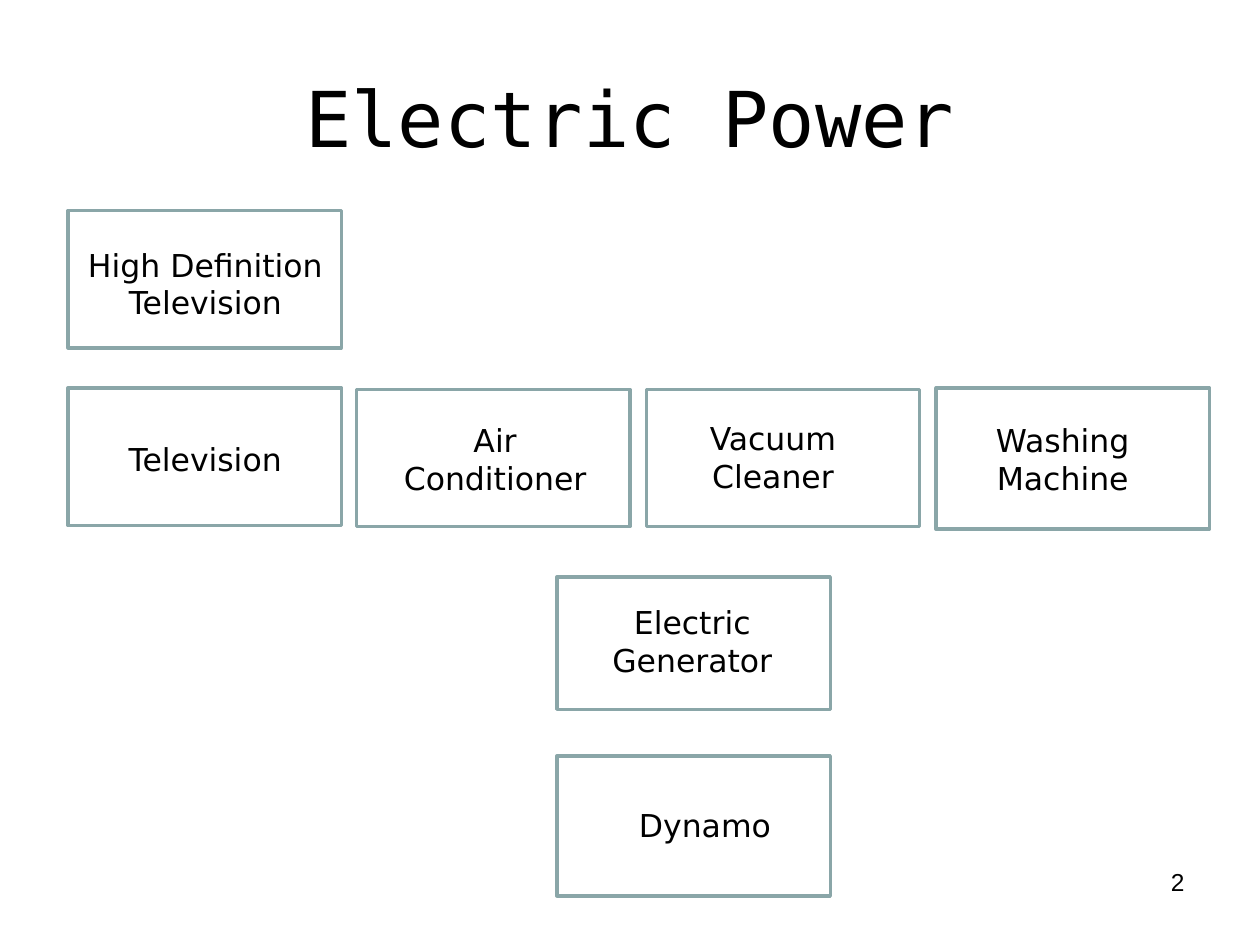
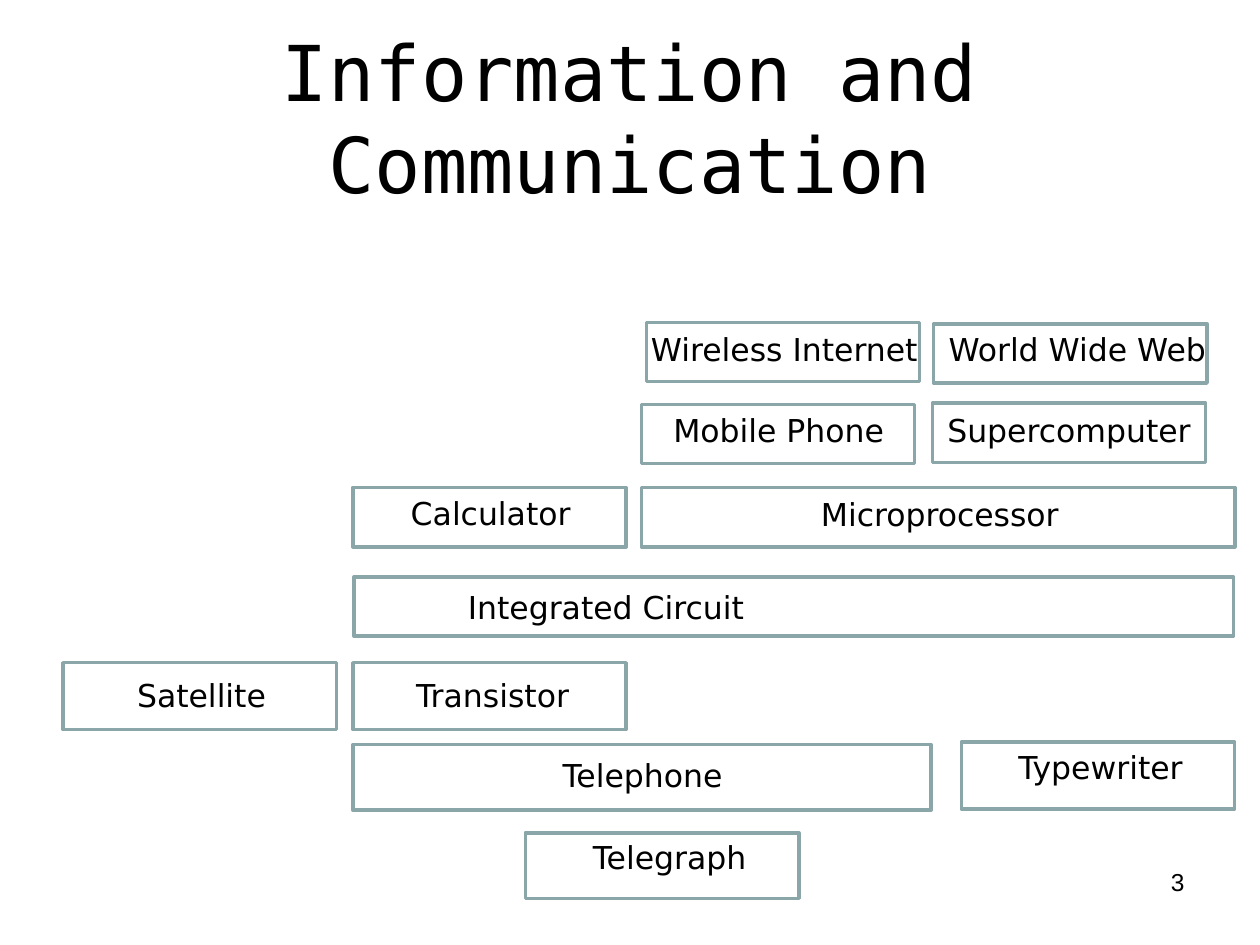
from pptx import Presentation
from pptx.dml.color import RGBColor
from pptx.enum.shapes import MSO_SHAPE
from pptx.enum.text import MSO_ANCHOR, MSO_AUTO_SIZE, PP_ALIGN
from pptx.util import Inches, Pt

COLORS = {"text": "000000", "frame": "8AA6A8", "background": "FFFFFF"}
TITLE_FONT, LABEL_FONT, NUMBER_FONT = "DejaVu Sans Mono", "DejaVu Sans", "Arial"
BOX_W = 2.17
LINE_H, PADDING = 0.31, 0.09

# Each entry: label text, frame (left, top, width, height), label (left, top, width)
POWER = [
    ("Dynamo", (4.42, 6, BOX_W, 1.11), (4.97, 6.35, 1.25)),
    ("Electric\nGenerator", (4.42, 4.58, BOX_W, 1.05), (4.76, 4.74, 1.47)),
    ("Air\nConditioner", (2.83, 3.09, BOX_W, 1.09), (3.1, 3.29, 1.66)),
    ("Vacuum\nCleaner", (5.13, 3.09, BOX_W, 1.09), (5.53, 3.28, 1.21)),
    ("Washing\nMachine", (7.43, 3.08, BOX_W, 1.12), (7.8, 3.29, 1.27)),
    ("Television", (0.54, 3.08, BOX_W, 1.09), (0.91, 3.44, 1.44)),
    ("High Definition\nTelevision", (0.54, 1.67, BOX_W, 1.09), (0.59, 1.9, 2.08)),
]
COMMUNICATION = [
    ("Telegraph", (4.17, 6.61, BOX_W, 0.52), (4.6, 6.6, 1.43)),
    ("Telephone", (2.8, 5.91, 4.59, 0.52), (4.36, 5.95, 1.48)),
    ("Transistor", (2.8, 5.26, BOX_W, 0.53), (3.19, 5.32, 1.44)),
    ("Integrated Circuit", (2.81, 4.58, 6.98, 0.47), (3.59, 4.62, 2.44)),
    ("Typewriter", (7.63, 5.89, BOX_W, 0.53), (7.97, 5.89, 1.53)),
    ("Satellite", (0.5, 5.26, BOX_W, 0.53), (0.98, 5.32, 1.24)),
    ("Calculator", (2.8, 3.87, BOX_W, 0.47), (3.16, 3.87, 1.47)),
    ("Microprocessor", (5.09, 3.87, 4.71, 0.47), (6.41, 3.88, 2.1)),
    ("Mobile Phone", (5.09, 3.21, BOX_W, 0.47), (5.24, 3.21, 1.88)),
    ("Supercomputer", (7.4, 3.2, BOX_W, 0.47), (7.41, 3.21, 2.15)),
    ("World Wide Web", (7.41, 2.57, BOX_W, 0.47), (7.41, 2.57, 2.28)),
    ("Wireless Internet", (5.13, 2.56, BOX_W, 0.47), (5.03, 2.57, 2.39)),
]


def rgb(name):
    return RGBColor.from_string(COLORS[name])


def add_text(s, text, box, *, font=LABEL_FONT, size=18, align=PP_ALIGN.CENTER,
             anchor=MSO_ANCHOR.TOP, wrap=True, auto_size=MSO_AUTO_SIZE.NONE):
    """Add a text box with one paragraph for each line of text."""
    tf = s.shapes.add_textbox(*map(Inches, box)).text_frame
    tf.word_wrap, tf.auto_size, tf.vertical_anchor = wrap, auto_size, anchor
    for i, line in enumerate(text.split("\n")):
        p = tf.add_paragraph() if i else tf.paragraphs[0]
        p.alignment = align
        r = p.add_run()
        r.text = line
        r.font.name, r.font.size = font, Pt(size)
        r.font.color.rgb = rgb("text")


def add_frame(s, box):
    sp = s.shapes.add_shape(MSO_SHAPE.RECTANGLE, *map(Inches, box))
    sp.shadow.inherit = False
    sp.fill.background()
    sp.line.color.rgb = rgb("frame")
    sp.line.width = Pt(2)


def add_invention(s, text, frame, label):
    """Add a frame and its label, whose height follows from its line count."""
    add_frame(s, frame)
    height = PADDING + LINE_H * len(text.split("\n"))
    add_text(s, text, (*label, height), wrap=False,
             auto_size=MSO_AUTO_SIZE.SHAPE_TO_FIT_TEXT)


def add_slide(prs, number, title, inventions):
    s = prs.slides.add_slide(prs.slide_layouts[6])
    s.background.fill.solid()
    s.background.fill.fore_color.rgb = rgb("background")
    add_text(s, title, (0.5, 0.3, 9, 1.25), font=TITLE_FONT, size=44,
             anchor=MSO_ANCHOR.MIDDLE)
    add_text(s, str(number), (7.17, 6.83, 2.33, 0.52), font=NUMBER_FONT, size=14,
             align=PP_ALIGN.RIGHT)
    for invention in inventions:
        add_invention(s, *invention)


def main():
    prs = Presentation()
    prs.slide_width, prs.slide_height = Inches(10), Inches(7.5)
    add_slide(prs, 2, "Electric Power", POWER)
    add_slide(prs, 3, "Information and Communication", COMMUNICATION)
    prs.save("out.pptx")


if __name__ == "__main__":
    main()
